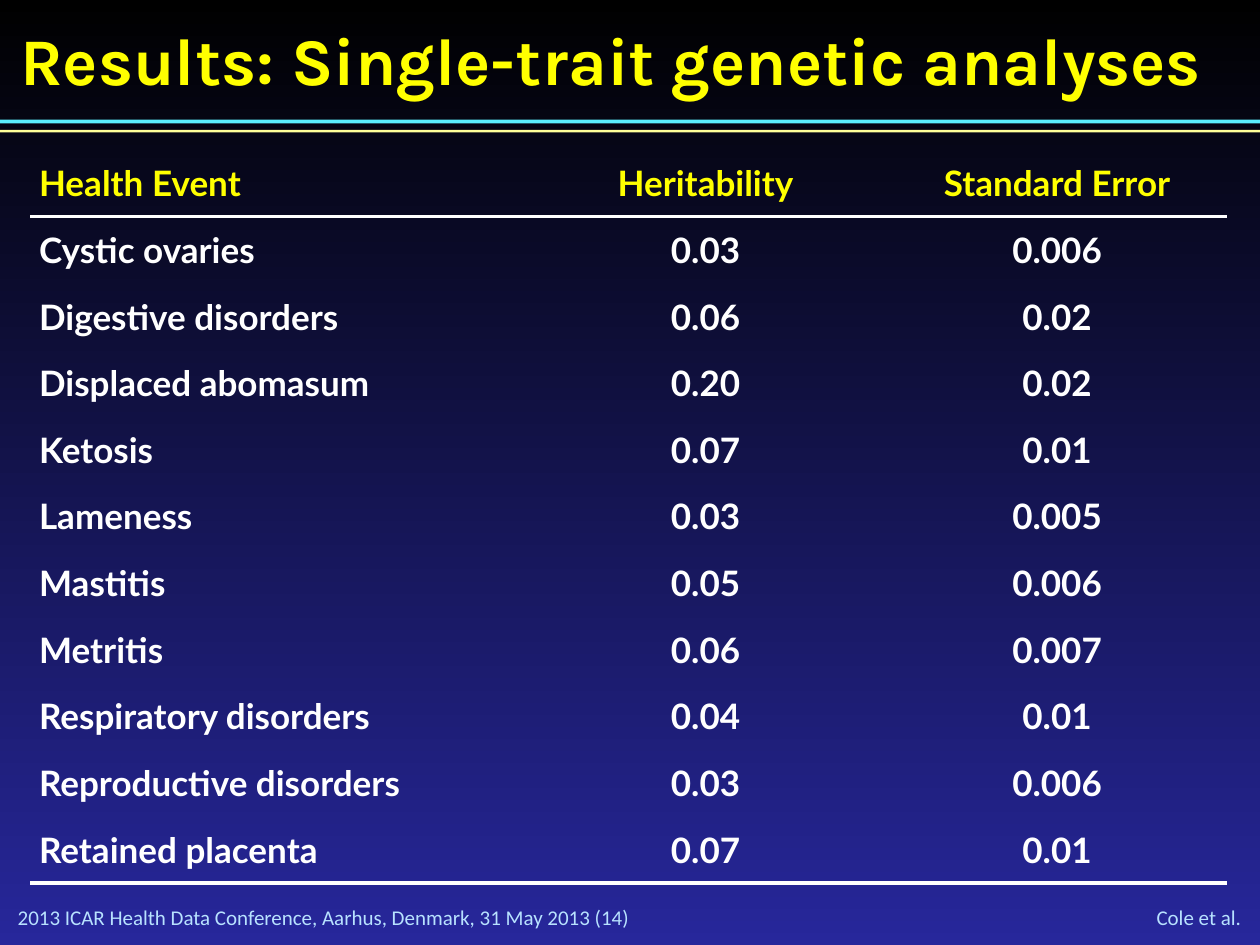
from lxml import etree
from pptx import Presentation
from pptx import util as u
from pptx.dml.color import RGBColor
from pptx.enum import shapes, text
from pptx.oxml.ns import qn

COLORS = {
    "top": "000000", "bottom": "27279B", "heading": "FFFF00", "body": "FFFFFF",
    "footer": "B8E2FF", "cyan": "5BEFFF", "cream": "FFFF99",
}
WIDTH, HEIGHT = u.Inches(10), u.Inches(7.5)
NO_STYLE = "{2D5ABB26-0587-4C30-8999-92F81FD0307C}"
COLUMN_SHARES = (3.92, 2.88, 2.7)
HEADER = ("Health Event", "Heritability", "Standard Error")
RESULTS = (
    ("Cystic ovaries", "0.03", "0.006"),
    ("Digestive disorders", "0.06", "0.02"),
    ("Displaced abomasum", "0.20", "0.02"),
    ("Ketosis", "0.07", "0.01"),
    ("Lameness", "0.03", "0.005"),
    ("Mastitis", "0.05", "0.006"),
    ("Metritis", "0.06", "0.007"),
    ("Respiratory disorders", "0.04", "0.01"),
    ("Reproductive disorders", "0.03", "0.006"),
    ("Retained placenta", "0.07", "0.01"),
)


def color(name):
    return RGBColor.from_string(COLORS[name])


def box(left, top, width, height):
    return tuple(u.Inches(length) for length in (left, top, width, height))


def format_paragraph(paragraph, font_name, size, color_name, bold, alignment):
    paragraph.alignment = alignment
    font = paragraph.font
    font.name, font.size, font.bold = font_name, u.Pt(size), bold
    font.color.rgb = color(color_name)


def set_frame(frame, words, anchor):
    frame.margin_left = frame.margin_right = 0
    frame.margin_top = frame.margin_bottom = 0
    frame.word_wrap = True
    frame.vertical_anchor = anchor
    frame.text = words
    return frame.paragraphs[0]


def paint_background(slide):
    fill = slide.background.fill
    fill.gradient()
    fill.gradient_angle = 270
    for stop, name in zip(fill.gradient_stops, ("top", "bottom")):
        stop.color.rgb = color(name)


def add_title(slide, area, words):
    title = slide.shapes.title
    title.left, title.top, title.width, title.height = area
    paragraph = set_frame(title.text_frame, words, text.MSO_ANCHOR.TOP)
    format_paragraph(paragraph, "Karla", 38, "heading", True, text.PP_ALIGN.LEFT)


def add_rule(slide, top, thickness, color_name):
    rule = slide.shapes.add_shape(
        shapes.MSO_SHAPE.RECTANGLE, 0, u.Inches(top), WIDTH, u.Inches(thickness))
    rule.shadow.inherit = False
    rule.fill.solid()
    rule.fill.fore_color.rgb = color(color_name)
    rule.line.fill.background()


def add_footer(slide, area, words, alignment):
    footer = slide.shapes.add_textbox(*area)
    paragraph = set_frame(footer.text_frame, words, text.MSO_ANCHOR.MIDDLE)
    format_paragraph(paragraph, "Calibri", 12, "footer", False, alignment)


def underline_cell(cell):
    properties = cell._tc.get_or_add_tcPr()
    line = etree.Element(qn("a:lnB"), w=str(u.Pt(2.25)))
    fill = etree.SubElement(line, qn("a:solidFill"))
    etree.SubElement(fill, qn("a:srgbClr"), val=COLORS["body"])
    properties.insert(0, line)


def add_results_table(slide, area, rows):
    frame = slide.shapes.add_table(len(rows), len(COLUMN_SHARES), *area)
    table = frame.table
    table.horz_banding = False
    table._tbl.tblPr.find(qn("a:tableStyleId")).text = NO_STYLE
    for column, share in zip(table.columns, COLUMN_SHARES):
        column.width = int(area[2] * share / sum(COLUMN_SHARES))

    for row_index, values in enumerate(rows):
        for column_index, value in enumerate(values):
            cell = table.cell(row_index, column_index)
            cell.text = value
            cell.fill.background()
            cell.vertical_anchor = text.MSO_ANCHOR.MIDDLE
            cell.margin_left = cell.margin_right = u.Inches(0.07)
            cell.margin_top = cell.margin_bottom = 0
            format_paragraph(
                cell.text_frame.paragraphs[0], "Lato", 20,
                "body" if row_index else "heading", True,
                text.PP_ALIGN.CENTER if column_index else text.PP_ALIGN.LEFT)
            if row_index in (0, len(rows) - 1):
                underline_cell(cell)


def main():
    presentation = Presentation()
    presentation.slide_width, presentation.slide_height = WIDTH, HEIGHT
    slide = presentation.slides.add_slide(presentation.slide_layouts[5])
    paint_background(slide)

    # Title band
    add_title(slide, box(0.16, 0.15, 9.65, 0.73),
              "Results: Single-trait genetic analyses")
    add_rule(slide, 0.95, 0.03, "cyan")
    add_rule(slide, 1.03, 0.02, "cream")

    # Results
    add_results_table(slide, box(0.24, 1.19, 9.5, 5.82), (HEADER, *RESULTS))

    # Footer
    add_footer(slide, box(0.14, 7.18, 5.78, 0.2),
               "2013 ICAR Health Data Conference, Aarhus, Denmark, 31 May 2013 (14)",
               text.PP_ALIGN.LEFT)
    add_footer(slide, box(8.72, 7.17, 1.13, 0.21), "Cole et al.", text.PP_ALIGN.RIGHT)

    presentation.save("out.pptx")


if __name__ == "__main__":
    main()
